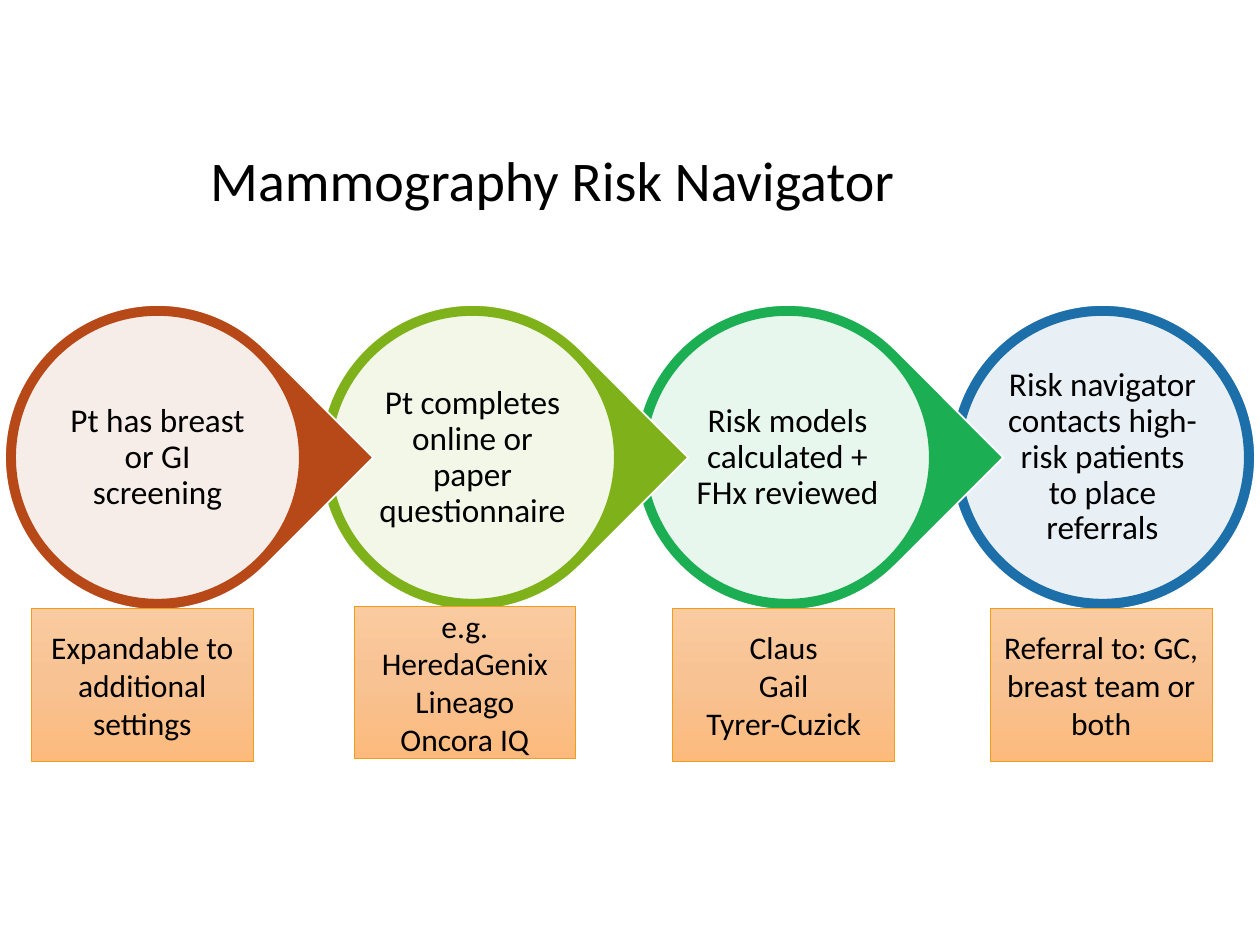
"""Build the Mammography Risk Navigator process slide."""
import copy

import lxml.etree
import pptx
import pptx.dml.color
import pptx.enum.shapes
import pptx.enum.text
import pptx.oxml.ns
import pptx.util

Inches = pptx.util.Inches
SHAPES = pptx.enum.shapes.MSO_SHAPE

COLORS = {
    "rust": "B74919", "lime": "7FB21A", "green": "1CAE53", "blue": "1D6FA9",
    "white": "FFFFFF", "text": "000000", "note_line": "F19D19",
}
NOTE_GRADIENT = ["FACBA0", "F8C292", "FCBA7D"]
TITLE = "Mammography Risk Navigator"
STEPS = [
    ("Pt has breast or GI screening", "rust"),
    ("Pt completes online or paper questionnaire", "lime"),
    ("Risk models calculated + FHx reviewed", "green"),
    ("Risk navigator contacts high-risk patients to place referrals", "blue"),
]
NOTES = [
    (0.25, 4.83, "Expandable to additional settings"),
    (2.81, 4.81, "e.g. HeredaGenix\nLineago\nOncora IQ"),
    (5.34, 4.83, "Claus\nGail\nTyrer-Cuzick"),
    (7.86, 4.83, "Referral to: GC, breast team or both"),
]
STEP_LEFT, STEP_TOP, STEP_PITCH = 0.04, 2.42, 2.5
OUTER, INNER, LABEL = 2.42, 2.26, 1.61
NOTE_WIDTH, NOTE_HEIGHT = 1.76, 1.21


def rgb(name):
    return pptx.dml.color.RGBColor.from_string(COLORS[name])


def write(shape, text, size, centered=True):
    frame = shape.text_frame
    frame.word_wrap = True
    frame.text = text
    if centered:
        frame.vertical_anchor = pptx.enum.text.MSO_ANCHOR.MIDDLE
    for paragraph in frame.paragraphs:
        if centered:
            paragraph.alignment = pptx.enum.text.PP_ALIGN.CENTER
        for run in paragraph.runs:
            run.font.name = "Calibri"
            run.font.size = pptx.util.Pt(size)
            run.font.color.rgb = rgb("text")
    return frame


def add_outlined(slide, kind, box, fill, line, line_width=1):
    shape = slide.shapes.add_shape(kind, *map(Inches, box))
    shape.shadow.inherit = False
    shape.fill.solid()
    shape.fill.fore_color.rgb = rgb(fill)
    shape.line.color.rgb = rgb(line)
    shape.line.width = pptx.util.Pt(line_width)
    return shape


def add_step(slide, index, text, color):
    left = STEP_LEFT + index * STEP_PITCH

    def centered_box(size):
        inset = (OUTER - size) / 2
        return left + inset, STEP_TOP + inset, size, size

    is_last = index == len(STEPS) - 1
    kind = SHAPES.OVAL if is_last else SHAPES.TEAR
    ring = add_outlined(slide, kind, centered_box(OUTER), color, "white")
    if not is_last:
        ring.adjustments[0] = 1
        ring.rotation = 45

    disc = add_outlined(slide, SHAPES.OVAL, centered_box(INNER), "white", color)
    fill_color = disc.fill._xPr.find(".//" + pptx.oxml.ns.qn("a:srgbClr"))
    lxml.etree.SubElement(fill_color, pptx.oxml.ns.qn("a:alpha"), val="90000")

    label = slide.shapes.add_textbox(*map(Inches, centered_box(LABEL)))
    frame = write(label, text, 19)
    frame.margin_left = frame.margin_right = Inches(0.03)
    frame.margin_top = frame.margin_bottom = Inches(0.03)
    frame.paragraphs[0].line_spacing = 0.9


def add_note(slide, left, top, text):
    box = (left, top, NOTE_WIDTH, NOTE_HEIGHT)
    note = add_outlined(slide, SHAPES.RECTANGLE, box, "white", "note_line", 0.5)
    note.fill.gradient()
    note.fill.gradient_angle = 270
    stop_list = note._element.spPr.find(".//" + pptx.oxml.ns.qn("a:gsLst"))
    stop_list.insert(1, copy.deepcopy(stop_list[0]))
    for index, (stop, color) in enumerate(zip(note.fill.gradient_stops, NOTE_GRADIENT)):
        stop.position = index / (len(NOTE_GRADIENT) - 1)
        stop.color.rgb = pptx.dml.color.RGBColor.from_string(color)
    write(note, text, 18)


def main():
    presentation = pptx.Presentation()
    presentation.slide_width = Inches(10)
    presentation.slide_height = Inches(7.5)
    slide = presentation.slides.add_slide(presentation.slide_layouts[6])
    for index, (text, color) in reversed(list(enumerate(STEPS))):
        add_step(slide, index, text, color)
    for note in NOTES:
        add_note(slide, *note)
    title = slide.shapes.add_textbox(*map(Inches, (1.57, 1.11, 7.88, 0.64)))
    write(title, TITLE, 32, centered=False)
    presentation.save("out.pptx")


if __name__ == "__main__":
    main()
